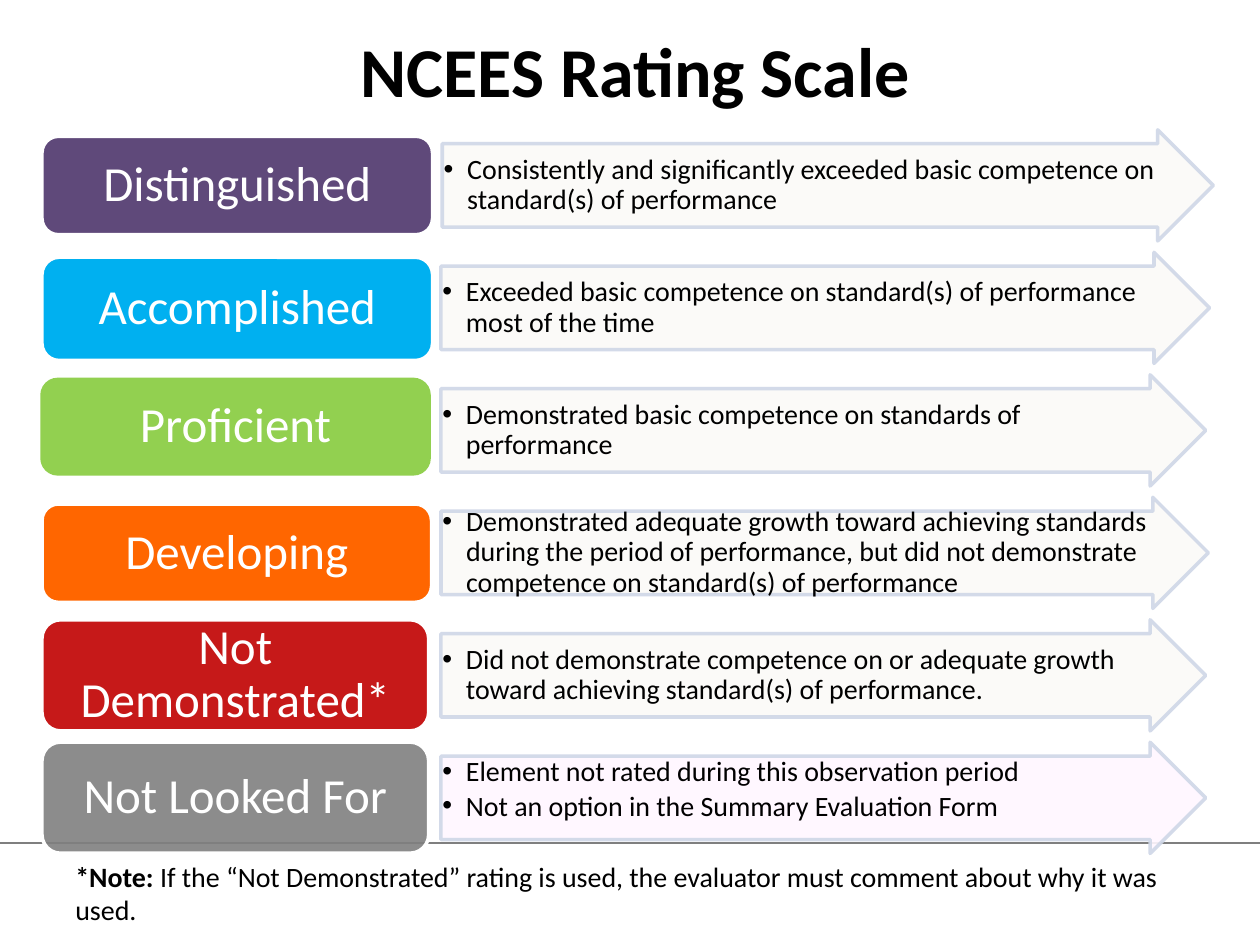
from dataclasses import dataclass

from lxml import etree
from pptx import Presentation
from pptx.dml.color import RGBColor
from pptx.enum.shapes import MSO_CONNECTOR, MSO_SHAPE
from pptx.enum.text import MSO_ANCHOR, PP_ALIGN
from pptx.oxml.ns import qn
from pptx.util import Pt

ROUNDED = MSO_SHAPE.ROUNDED_RECTANGLE
ARROW = MSO_SHAPE.RIGHT_ARROW
STRAIGHT = MSO_CONNECTOR.STRAIGHT
TOP, MIDDLE = MSO_ANCHOR.TOP, MSO_ANCHOR.MIDDLE
LEFT, CENTER = PP_ALIGN.LEFT, PP_ALIGN.CENTER


@dataclass(frozen=True)
class Theme:
    font: str = "Calibri"
    title_size: int = 40
    label_size: int = 28
    body_size: int = 16
    text: str = "000000"
    white: str = "FFFFFF"
    rule: str = "7F7F7F"
    arrow_fill: str = "FBFAF8"
    arrow_fill_unrated: str = "FFF7FF"
    arrow_line: str = "CFD7E7"
    distinguished: str = "5F497A"
    accomplished: str = "00B0F0"
    proficient: str = "92D050"
    developing: str = "FF6600"
    not_demonstrated: str = "C00000"
    not_looked_for: str = "808080"


class SlideBuilder:
    def __init__(self, slide, theme):
        self.slide = slide
        self.theme = theme

    def set_opacity(self, color_format_parent, percent):
        for color in color_format_parent.iter(qn("a:srgbClr")):
            etree.SubElement(color, qn("a:alpha"), val=str(percent * 1000))

    def add_run(self, paragraph, text, size, color, bold=False):
        run = paragraph.add_run()
        run.text = text
        run.font.name = self.theme.font
        run.font.size = Pt(size)
        run.font.bold = bold
        run.font.color.rgb = RGBColor.from_string(color)

    def set_frame(self, frame, anchor, side, vertical):
        frame.word_wrap = True
        frame.vertical_anchor = anchor
        frame.margin_left = frame.margin_right = Pt(side)
        frame.margin_top = frame.margin_bottom = Pt(vertical)

    def add_bullet(self, paragraph):
        properties = paragraph._p.get_or_add_pPr()
        properties.set("marL", str(Pt(13.5)))
        properties.set("indent", str(-Pt(13.5)))
        color = etree.SubElement(properties, qn("a:buClr"))
        etree.SubElement(color, qn("a:srgbClr"), val=self.theme.text)
        etree.SubElement(properties, qn("a:buFont"), typeface="Arial")
        etree.SubElement(properties, qn("a:buChar"), char="•")

    def add_block(self, kind, box, fill, line, adjustments):
        shape = self.slide.shapes.add_shape(kind, *map(Pt, box))
        shape.shadow.inherit = False
        for index, value in enumerate(adjustments):
            shape.adjustments[index] = value
        shape.fill.solid()
        shape.fill.fore_color.rgb = RGBColor.from_string(fill)
        shape.line.color.rgb = RGBColor.from_string(line)
        shape.line.width = Pt(2)
        return shape

    def add_label(self, text, box, fill, line, opacity):
        shape = self.add_block(ROUNDED, box, fill, line, [0.167])
        if opacity < 100:
            self.set_opacity(shape._element.spPr.find(qn("a:solidFill")), opacity)
        self.set_frame(shape.text_frame, MIDDLE, 8.4, 4.2)
        paragraph = shape.text_frame.paragraphs[0]
        paragraph.alignment = CENTER
        paragraph.line_spacing = 0.9
        self.add_run(paragraph, text, self.theme.label_size, self.theme.white)

    def add_arrow(self, bullets, box, fill, anchor):
        shape = self.add_block(ARROW, box, fill, self.theme.arrow_line, [0.75, 0.5])
        self.set_opacity(shape._element.spPr, 90)
        frame = shape.text_frame
        self.set_frame(frame, anchor, 0.8, 0.8)
        for index, text in enumerate(bullets):
            paragraph = frame.add_paragraph() if index else frame.paragraphs[0]
            self.add_bullet(paragraph)
            paragraph.level = 1
            paragraph.alignment = LEFT
            paragraph.line_spacing = 0.9
            if index:
                paragraph.space_before = Pt(2.4)
            self.add_run(paragraph, text, self.theme.body_size, self.theme.text)

    def add_text(self, runs, box, size, alignment=LEFT):
        frame = self.slide.shapes.add_textbox(*map(Pt, box)).text_frame
        self.set_frame(frame, TOP, 7.2, 3.6)
        paragraph = frame.paragraphs[0]
        paragraph.alignment = alignment
        for text, bold in runs:
            self.add_run(paragraph, text, size, self.theme.text, bold)

    def add_rule(self, top, width):
        rule = self.slide.shapes.add_connector(STRAIGHT, 0, Pt(top), Pt(width), Pt(top))
        rule.line.color.rgb = RGBColor.from_string(self.theme.rule)
        rule.line.width = Pt(1)
        etree.SubElement(rule._element.spPr, qn("a:effectLst"))


def main():
    theme = Theme()
    presentation = Presentation()
    presentation.slide_width, presentation.slide_height = Pt(720), Pt(540)
    slide = presentation.slides.add_slide(presentation.slide_layouts[6])
    builder = SlideBuilder(slide, theme)

    # Footer rule, behind the ratings
    builder.add_rule(481.7, 720)

    # Ratings: name, fill, outline, opacity, label top, width and height,
    # arrow left and width, descriptions
    ratings = [
        ("Distinguished", theme.distinguished, theme.white, 100,
         (77.9, 223.2, 56.2), (252.7, 440.6),
         ["Consistently and significantly exceeded basic competence on "
          "standard(s) of performance"]),
        ("Accomplished", theme.accomplished, theme.white, 100,
         (147, 223.2, 59), (252, 439.2),
         ["Exceeded basic competence on standard(s) of performance most of the time"]),
        ("Proficient", theme.proficient, theme.proficient, 100,
         (216.8, 221.2, 54), (252, 437),
         ["Demonstrated basic competence on standards of performance"]),
        ("Developing", theme.developing, theme.white, 100,
         (288, 222.6, 56.2), (252, 438.5),
         ["Demonstrated adequate growth toward achieving standards during the "
          "period of performance, but did not demonstrate competence on "
          "standard(s) of performance"]),
        ("Not Demonstrated*", theme.not_demonstrated, theme.white, 90,
         (354.2, 221, 63.5), (252, 437),
         ["Did not demonstrate competence on or adequate growth toward "
          "achieving standard(s) of performance."]),
        ("Not Looked For", theme.not_looked_for, theme.white, 90,
         (424.1, 221, 63.5), (252, 437),
         ["Element not rated during this observation period",
          "Not an option in the Summary Evaluation Form"]),
    ]
    first_top, pitch, arrow_height, label_left = 74.2, 70, 63.5, 24
    for index, rating in enumerate(ratings):
        name, fill, line, opacity, label, arrow, bullets = rating
        unrated = len(bullets) > 1
        arrow_left, arrow_width = arrow
        arrow_box = (arrow_left, first_top + index * pitch, arrow_width, arrow_height)
        arrow_fill = theme.arrow_fill_unrated if unrated else theme.arrow_fill
        builder.add_arrow(bullets, arrow_box, arrow_fill, TOP if unrated else MIDDLE)
        builder.add_label(name, (label_left, *label), fill, line, opacity)

    # Note and title
    builder.add_text(
        [("*Note: ", True),
         ("If the “Not Demonstrated” rating is used, the evaluator must comment "
          "about why it was used.", False)],
        (36, 487.5, 642, 67.5), theme.body_size)
    builder.add_text([("NCEES Rating Scale", True)],
                     (36, 12, 654, 55.5), theme.title_size, CENTER)

    presentation.save("out.pptx")


if __name__ == "__main__":
    main()
